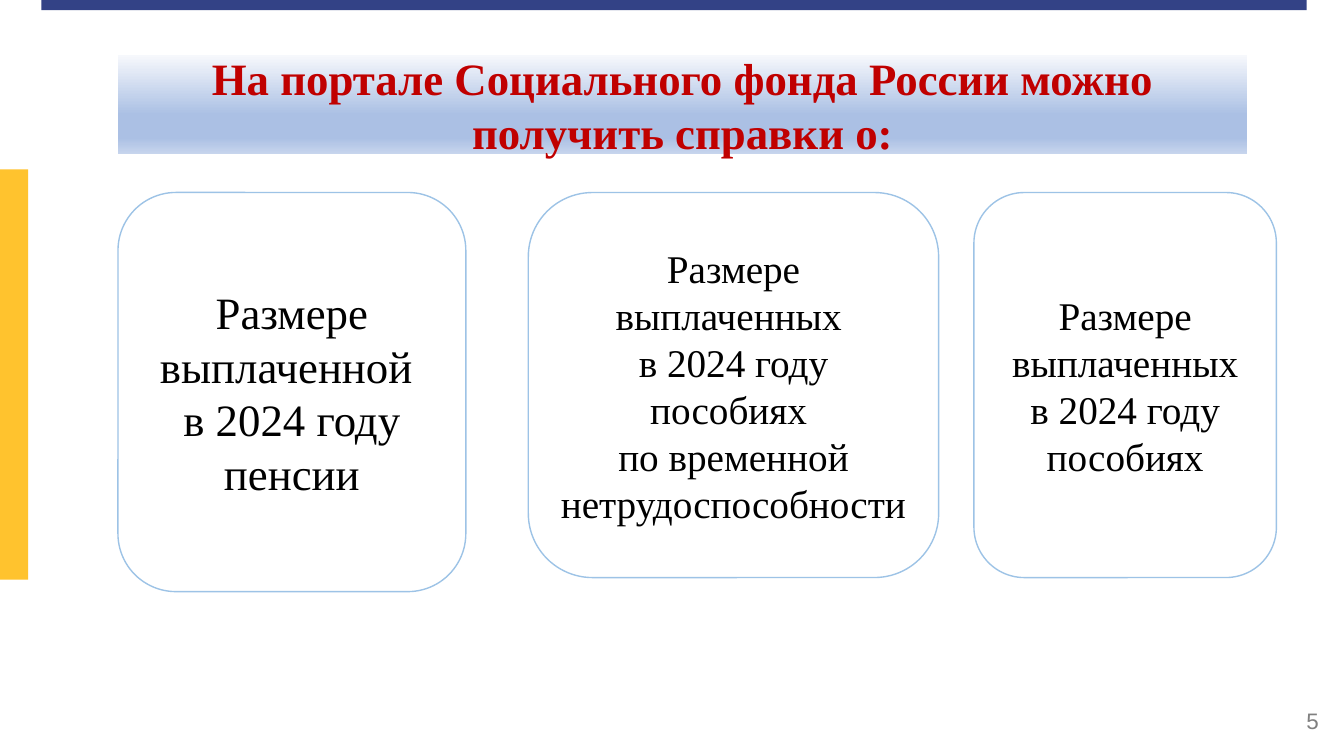
from lxml import etree
from pptx import Presentation
from pptx.dml.color import RGBColor
from pptx.enum.shapes import MSO_SHAPE
from pptx.enum.text import MSO_ANCHOR, MSO_AUTO_SIZE, PP_ALIGN
from pptx.oxml.ns import qn
from pptx.util import Inches, Pt

RECTANGLE, ROUNDED = MSO_SHAPE.RECTANGLE, MSO_SHAPE.ROUNDED_RECTANGLE
CENTER, RIGHT = PP_ALIGN.CENTER, PP_ALIGN.RIGHT
SERIF = "Times New Roman"


def color(value):
    return RGBColor.from_string(value)


def write(box, text, size, font=SERIF, fill="000000", bold=False, align=CENTER):
    frame = box.text_frame
    frame.word_wrap = True
    frame.auto_size = MSO_AUTO_SIZE.NONE
    frame.vertical_anchor = MSO_ANCHOR.MIDDLE
    para = frame.paragraphs[0]
    para.text = text
    para.alignment = align
    for span in para.runs:
        span.font.name = font
        span.font.size = Pt(size)
        span.font.bold = bold
        span.font.color.rgb = color(fill)


deck = Presentation()
deck.slide_width, deck.slide_height = Inches(13.33), Inches(7.5)
page = deck.slides.add_slide(deck.slide_layouts[5])

# Title on a vertical gradient
title = page.shapes.title
title.left, title.top = Inches(1.17), Inches(0.55)
title.width, title.height = Inches(11.2), Inches(0.98)
title.fill.gradient()
title.fill.gradient_angle = 270
stops = title.element.find(".//" + qn("a:gsLst"))
for stop in list(stops):
    stops.remove(stop)
for percent, shade in [(0, "F6F8FC"), (60, "ABC0E4"), (83, "ABC0E4"), (100, "C7D5ED")]:
    stop = etree.SubElement(stops, qn("a:gs"), pos=str(percent * 1000))
    etree.SubElement(stop, qn("a:srgbClr"), val=shade)
write(title, "На портале Социального фонда России можно получить справки о:",
      32, fill="C00000", bold=True)

# Edge bars
for left, top, width, height, shade in [
    (0.41, 0, 12.55, 0.1, "334286"),
    (0, 1.68, 0.28, 4.07, "FFC32E"),
]:
    bar = page.shapes.add_shape(RECTANGLE, Inches(left), Inches(top), Inches(width), Inches(height))
    bar.shadow.inherit = False
    bar.fill.solid()
    bar.fill.fore_color.rgb = color(shade)
    bar.line.fill.background()

# Certificate cards
for left, width, height, size, text in [
    (1.17, 3.45, 3.96, 32, "Размере выплаченной \nв 2024 году пенсии"),
    (5.24, 4.07, 3.82, 28,
     "Размере выплаченных \nв 2024 году пособиях \nпо временной нетрудоспособности"),
    (9.66, 3, 3.82, 28, "Размере выплаченных в 2024 году пособиях"),
]:
    card = page.shapes.add_shape(ROUNDED, Inches(left), Inches(1.91), Inches(width), Inches(height))
    card.shadow.inherit = False
    card.fill.background()
    card.line.color.rgb = color("9DC3E6")
    card.line.width = Pt(1)
    write(card, text, size)

number = page.shapes.add_textbox(Inches(10.18), Inches(6.95), Inches(3), Inches(0.4))
write(number, "5", 16, font="Arial", fill="808080", align=RIGHT)

deck.save("out.pptx")
